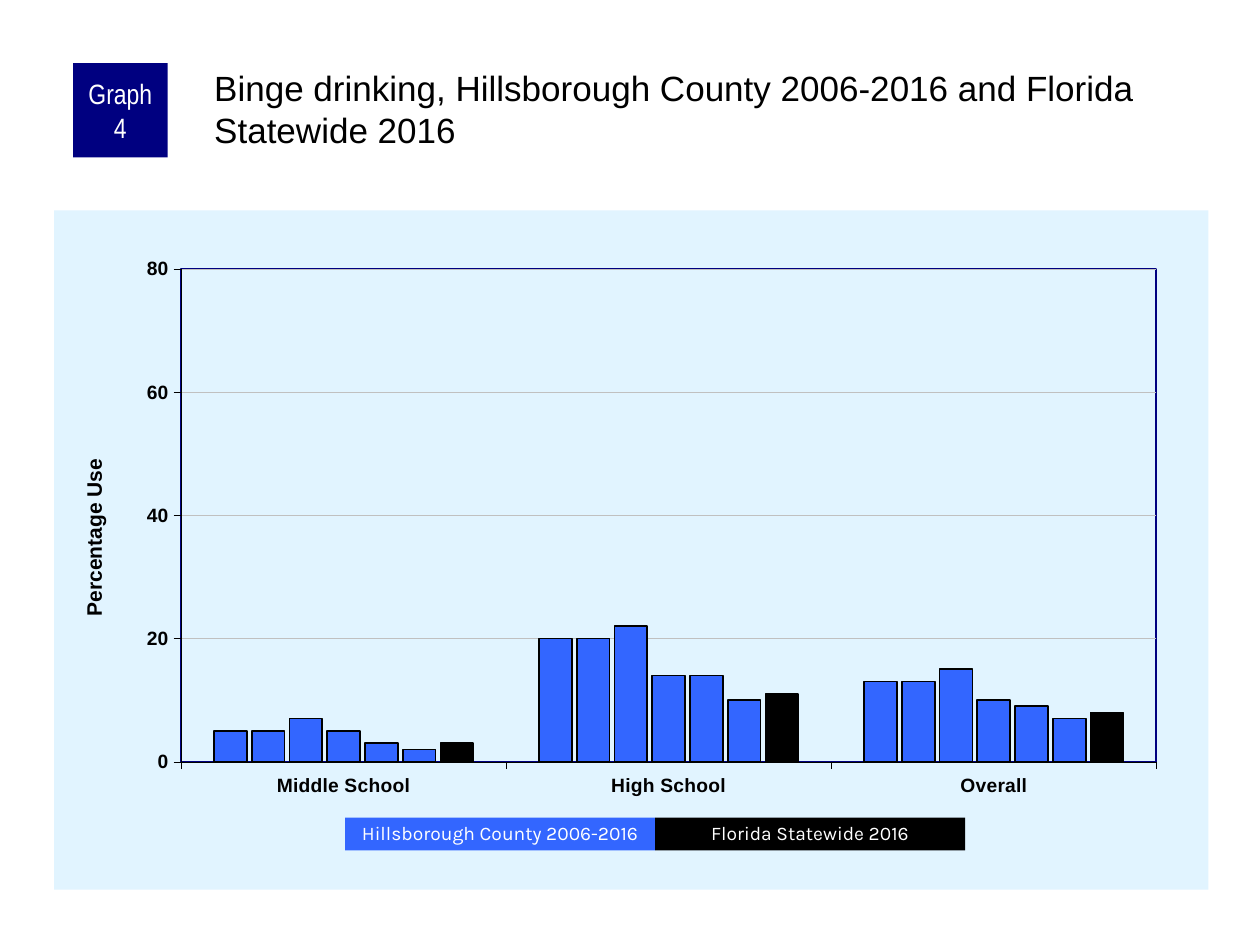
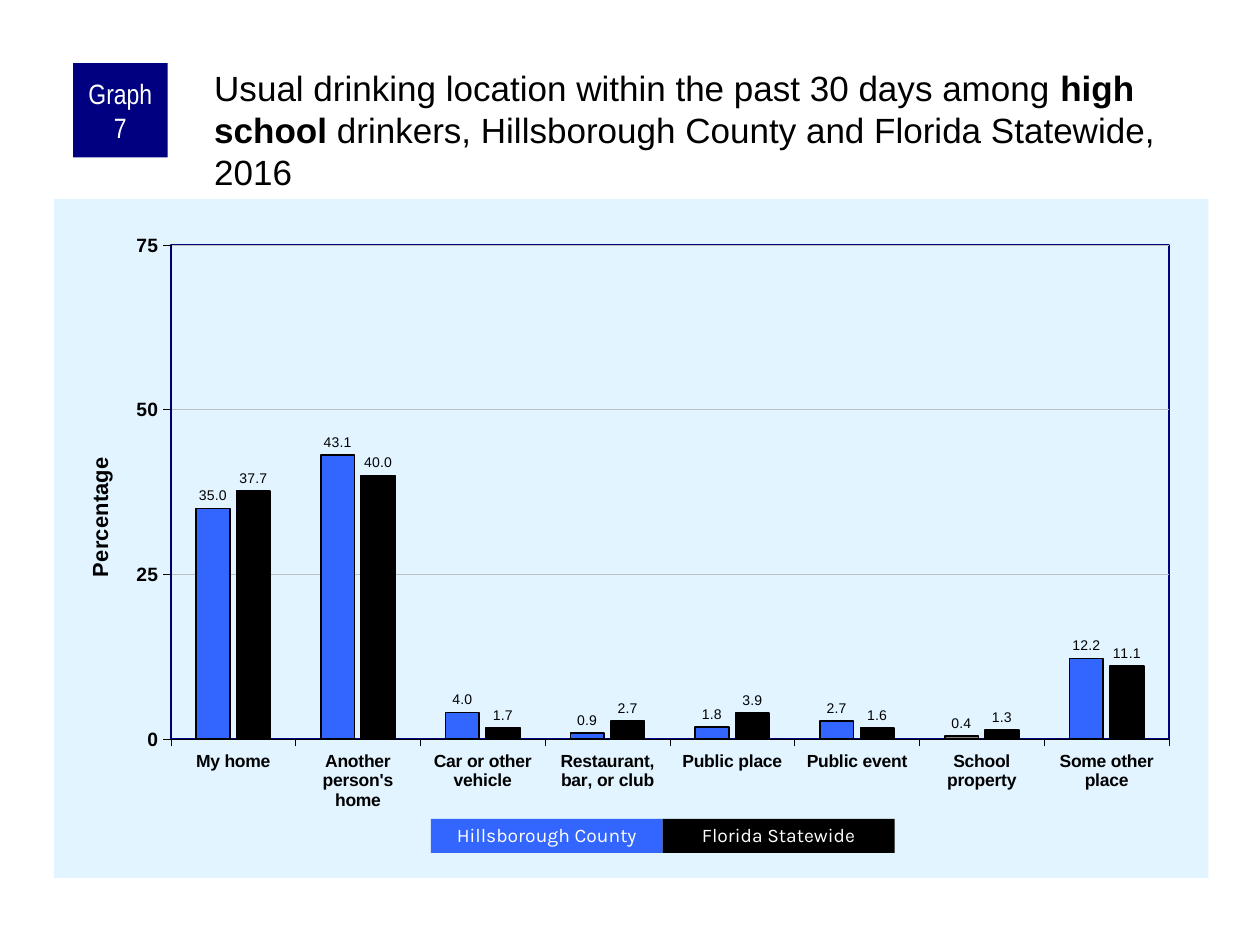
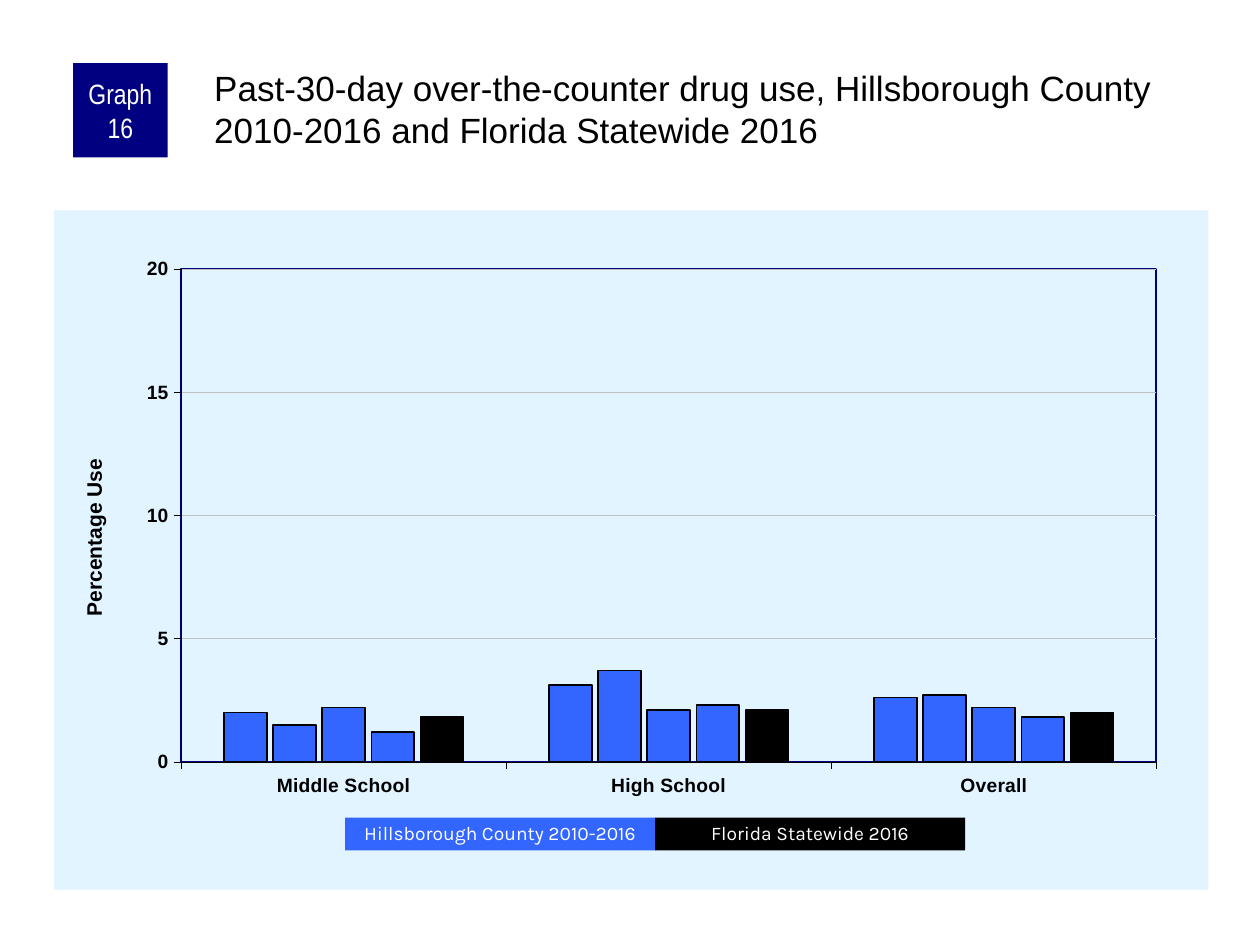
"""Builds three graph slides on drinking and drug use among Hillsborough County students."""
from lxml import etree
from pptx import Presentation
from pptx import util as u
from pptx.chart.data import CategoryChartData
from pptx.dml.color import RGBColor
from pptx.enum import chart as ch
from pptx.enum import shapes, text
from pptx.oxml import ns, parse_xml

COLORS = {
    "navy": "000080",
    "county": "3366FF",
    "state": "000000",
    "panel": "E1F4FF",
    "grid": "C0C0C0",
    "muted": "808080",
    "text": "000000",
    "white": "FFFFFF",
}
LEVELS = ["Middle School", "High School", "Overall"]
PLACES = ["My home", "Another person's home", "Car or other vehicle", "Restaurant, bar, or club",
          "Public place", "Public event", "School property", "Some other place"]


def rgb(name):
    return RGBColor.from_string(COLORS[name])


def set_font(font, size, color="text", face="Arial", bold=False):
    font.name, font.size, font.bold = face, u.Pt(size), bold
    font.color.rgb = rgb(color)


def set_line(line, color, width):
    line.color.rgb = rgb(color)
    line.width = u.Pt(width)


def place(element, index, **settings):
    for old in element.findall(ns.qn("c:layout")):
        element.remove(old)
    layout = etree.Element(ns.qn("c:layout"))
    manual = etree.SubElement(layout, ns.qn("c:manualLayout"))
    for tag, value in settings.items():
        etree.SubElement(manual, ns.qn(f"c:{tag}")).set("val", str(value))
    element.insert(index, layout)


def area_format(content):
    return parse_xml(f'<c:spPr {ns.nsdecls("c", "a")}>{content}</c:spPr>')


def solid(name):
    return f'<a:solidFill><a:srgbClr val="{COLORS[name]}"/></a:solidFill>'


class GraphDeck:
    """Holds the shared style and the slide being built."""

    def __init__(self):
        self.deck = Presentation()
        self.deck.slide_width, self.deck.slide_height = u.Inches(10), u.Inches(7.5)
        self.slide = None

    def new_slide(self):
        self.slide = self.deck.slides.add_slide(self.deck.slide_layouts[6])

    def box(self, left, top, width, height, fill, label, size, face):
        box = self.slide.shapes.add_shape(shapes.MSO_SHAPE.RECTANGLE, u.Inches(left), u.Inches(top),
                                          u.Inches(width), u.Inches(height))
        box.shadow.inherit = False
        box.fill.solid()
        box.fill.fore_color.rgb = rgb(fill)
        box.line.fill.background()
        frame = box.text_frame
        frame.word_wrap = True
        frame.vertical_anchor = text.MSO_ANCHOR.MIDDLE
        frame.margin_left = frame.margin_right = u.Inches(0.05)
        frame.margin_top = frame.margin_bottom = 0
        label_line = frame.paragraphs[0]
        label_line.text = label
        label_line.alignment = text.PP_ALIGN.CENTER
        set_font(label_line.font, size, "white", face)
        return box

    def badge(self, number):
        self.box(0.58, 0.5, 0.75, 0.75, "navy", f"Graph {number}", 16, "Arial Narrow")

    def title(self, parts):
        frame = self.slide.shapes.add_textbox(u.Inches(1.67), u.Inches(0.5), u.Inches(7.92),
                                              u.Inches(0.83)).text_frame
        frame.word_wrap = True
        frame.margin_left = frame.margin_top = u.Inches(0.03)
        frame.margin_right = frame.margin_bottom = 0
        heading = frame.paragraphs[0]
        set_font(heading.font, 20)
        for index, part in enumerate(parts):
            run = heading.add_run()
            run.text = part
            run.font.bold = index % 2 == 1

    def legend(self, left, top, width, height, labels):
        for index, (label, fill) in enumerate(zip(labels, ("county", "state"))):
            key = self.box(left + index * width, top, width, height, fill, label, 11, "Karla")
            key.text_frame.paragraphs[0].line_spacing = 0.9

    def chart(self, top, categories, rows, plot, axis_name, name_at, maximum, step,
              name_size=12, category_size=11, gap=200, overlap=-15):
        data = CategoryChartData()
        data.categories = categories
        for index, row in enumerate(rows, 1):
            data.add_series(f"Series {index}", row)
        chart = self.slide.shapes.add_chart(ch.XL_CHART_TYPE.COLUMN_CLUSTERED, u.Inches(0.43), u.Inches(top),
                                            u.Inches(9.16), u.Inches(5.39), data).chart
        chart.has_legend = chart.has_title = False
        set_font(chart.font, 8)
        bars = chart.plots[0]
        bars.gap_width, bars.overlap, bars.vary_by_categories = gap, overlap, False
        for index, series in enumerate(bars.series, 1):
            series.invert_if_negative = False
            series.format.fill.solid()
            series.format.fill.fore_color.rgb = rgb("state" if index == len(rows) else "county")
            set_line(series.format.line, "text", 1)
        self.axes(chart, axis_name, name_at, maximum, step, name_size, category_size)
        area = chart.element.find(ns.qn("c:chart"))
        area.addnext(area_format(solid("panel") + "<a:ln><a:noFill/></a:ln>"))
        plot_area = area.find(ns.qn("c:plotArea"))
        x, y, w, h = plot
        place(plot_area, 0, layoutTarget="inner", xMode="edge", yMode="edge", x=x, y=y, w=w, h=h)
        plot_area.append(area_format(f'<a:noFill/><a:ln w="{u.Pt(1)}">{solid("navy")}</a:ln>'))
        return chart

    def axes(self, chart, axis_name, name_at, maximum, step, name_size, category_size):
        values = chart.value_axis
        for axis, size in ((chart.category_axis, category_size), (values, 11)):
            axis.major_tick_mark = ch.XL_TICK_MARK.OUTSIDE
            set_font(axis.tick_labels.font, size, bold=True)
            set_line(axis.format.line, "text", 0.25)
        values.minimum_scale, values.maximum_scale, values.major_unit = 0, maximum, step
        values.has_major_gridlines = True
        set_line(values.major_gridlines.format.line, "grid", 0.25)
        name = values.axis_title
        name.text_frame.text = axis_name
        set_font(name.text_frame.paragraphs[0].font, name_size, bold=True)
        body = name.element.find(".//" + ns.qn("a:bodyPr"))
        body.set("rot", "-5400000")
        body.set("vert", "horz")
        x, y = name_at
        place(name.element, 1, xMode="edge", yMode="edge", x=x, y=y)

    def bar_values(self, chart):
        for series in chart.plots[0].series:
            labels = series.data_labels
            labels.show_value = True
            labels.position = ch.XL_LABEL_POSITION.OUTSIDE_END
            labels.number_format, labels.number_format_is_linked = "0.0", False
            set_font(labels.font, 8)

    def trend_slide(self, number, title, years, rows, maximum, step):
        self.new_slide()
        self.chart(1.67, LEVELS, rows, (0.11, 0.086, 0.845, 0.726), "Percentage Use", (0.02, 0.36),
                   maximum, step)
        self.badge(number)
        self.title([title])
        self.legend(2.74, 6.49, 2.46, 0.26, (f"Hillsborough County {years}", "Florida Statewide 2016"))

    def location_slide(self, number, title, rows):
        self.new_slide()
        chart = self.chart(1.58, PLACES, rows, (0.101, 0.068, 0.865, 0.727), "Percentage", (0.024, 0.374),
                           75, 25, name_size=12.5, category_size=10, gap=150, overlap=-20)
        self.bar_values(chart)
        school_bar = chart.plots[0].series[0].points[PLACES.index("School property")].format
        school_bar.fill.solid()
        school_bar.fill.fore_color.rgb = rgb("muted")
        set_line(school_bar.line, "text", 1)
        self.badge(number)
        self.title(title)
        self.legend(3.42, 6.5, 1.84, 0.27, ("Hillsborough County", "Florida Statewide"))


def main():
    graphs = GraphDeck()
    graphs.trend_slide(
        4, "Binge drinking, Hillsborough County 2006-2016 and Florida Statewide 2016", "2006-2016",
        [(5, 20, 13), (5, 20, 13), (7, 22, 15), (5, 14, 10), (3, 14, 9), (2, 10, 7), (3, 11, 8)], 80, 20)
    graphs.location_slide(
        7, ["Usual drinking location within the past 30 days among ", "high school",
            " drinkers, Hillsborough County and Florida Statewide, 2016"],
        [(35, 43.1, 4, 0.9, 1.8, 2.7, 0.4, 12.2), (37.7, 40, 1.7, 2.7, 3.9, 1.6, 1.3, 11.1)])
    graphs.trend_slide(
        16, "Past-30-day over-the-counter drug use, Hillsborough County 2010-2016 and Florida Statewide 2016",
        "2010-2016", [(2, 3.1, 2.6), (1.5, 3.7, 2.7), (2.2, 2.1, 2.2), (1.2, 2.3, 1.8), (1.8, 2.1, 2)], 20, 5)
    graphs.deck.save("out.pptx")


if __name__ == "__main__":
    main()
